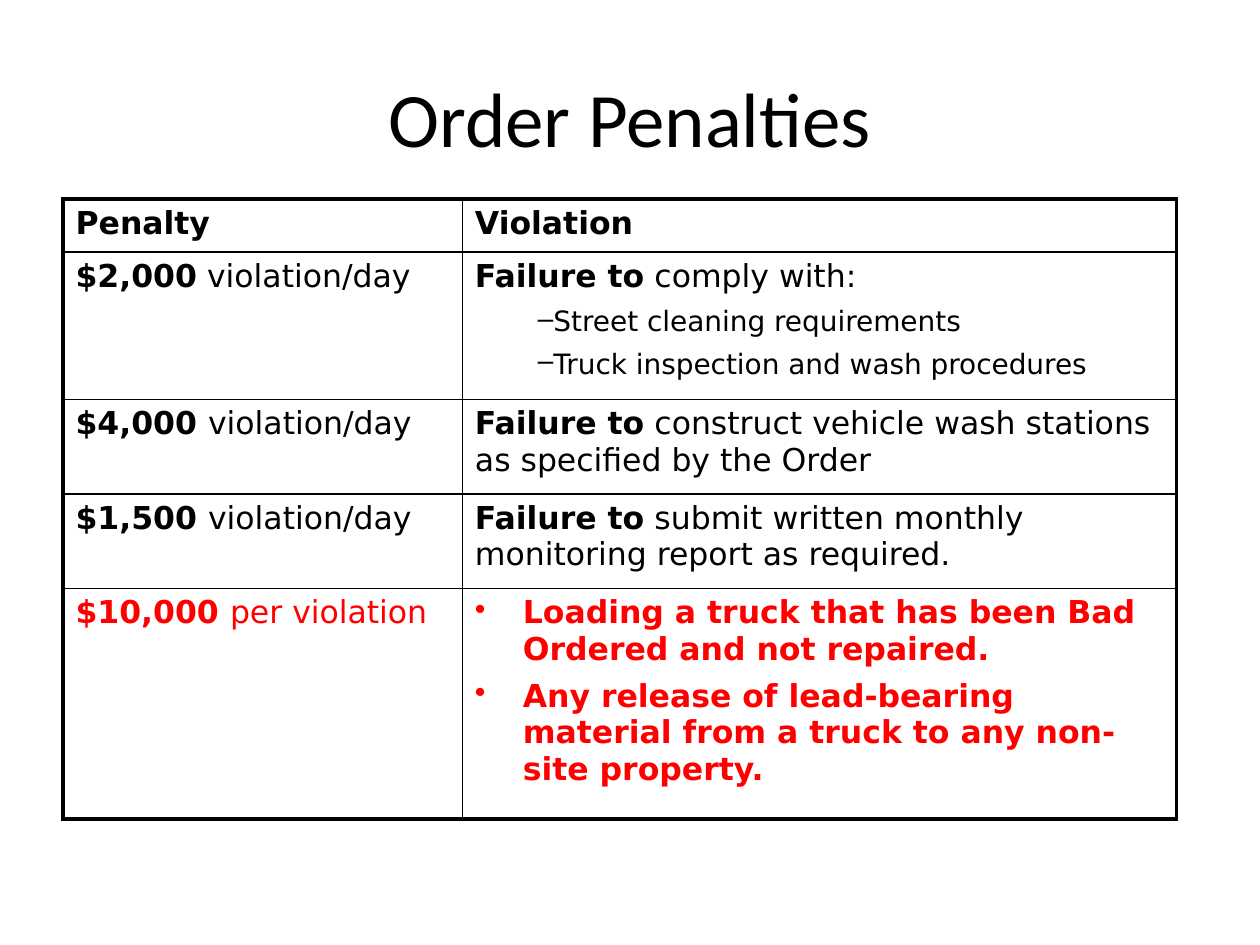
from lxml.etree import SubElement as Sub
from pptx import Presentation
from pptx.dml.color import RGBColor
from pptx.enum.text import MSO_ANCHOR as Anchor, PP_ALIGN as Align
from pptx.oxml.ns import qn
from pptx.util import Inches, Pt

BLACK = RGBColor(0, 0, 0)
RED = RGBColor(255, 0, 0)
WHITE = RGBColor(255, 255, 255)
THIN, THICK = Pt(1), Pt(2.25)

# A cell is a list of paragraphs: (kind, bold text, plain text).
ROWS = [
    (0.42, BLACK, [("text", "Penalty", "")], [("text", "Violation", "")]),
    (1.17, BLACK, [("text", "$2,000", " violation/day")],
     [("text", "Failure to", " comply with:"),
      ("dash", "", "Street cleaning requirements"),
      ("dash", "", "Truck inspection and wash procedures")]),
    (0.75, BLACK, [("text", "$4,000 ", "violation/day")],
     [("text", "Failure to",
       " construct vehicle wash stations as specified by the Order")]),
    (0.75, BLACK, [("text", "$1,500 ", "violation/day")],
     [("text", "Failure to",
       " submit written monthly monitoring report as required.")]),
    (1.83, RED, [("text", "$10,000 ", "per violation")],
     [("dot", "Loading a truck that has been Bad Ordered and not repaired.", ""),
      ("dot", "Any release of lead-bearing material from a truck "
              "to any non-site property.", "")]),
]
COLS = (3.17, 5.67)

# kind: (level, left margin, indent, bullet, size)
KINDS = {
    "text": (0, 0, 0, None, 18),
    "dash": (1, 0.5, 0, "–", 16),
    "dot": (0, 0.38, -0.38, "•", 18),
}


class Deck:
    head = "Calibri"
    body = "DejaVu Sans"

    def __init__(self):
        self.prs = Presentation()
        self.prs.slide_width = Inches(10)
        self.prs.slide_height = Inches(7.5)
        self.slide = self.prs.slides.add_slide(self.prs.slide_layouts[6])

    def run(self, para, text, face, size, color, bold=False):
        run = para.add_run()
        run.text = text
        font = run.font
        font.name, font.size, font.bold = face, Pt(size), bold
        font.color.rgb = color

    def title(self, text):
        box = self.slide.shapes.add_textbox(
            Inches(0.5), Inches(0.3), Inches(9), Inches(1.25))
        frame = box.text_frame
        frame.word_wrap = True
        frame.vertical_anchor = Anchor.MIDDLE
        para = frame.paragraphs[0]
        para.alignment = Align.CENTER
        self.run(para, text, self.head, 44, BLACK)

    def para(self, para, kind, bold, plain, color):
        level, left, indent, mark, size = KINDS[kind]
        para.level = level
        para.space_after = Pt(6)
        props = para._p.get_or_add_pPr()
        props.set("marL", str(Inches(left)))
        props.set("indent", str(Inches(indent)))
        if mark:
            Sub(props, qn("a:buChar"), char=mark)
        for text, heavy in ((bold, True), (plain, False)):
            if text:
                self.run(para, text, self.body, size, color, heavy)

    def edges(self, cell, widths):
        """Draw the left, right, top and bottom borders, in that order."""
        props = cell._tc.get_or_add_tcPr()
        for side, width in zip("LRTB", widths):
            line = Sub(props, qn(f"a:ln{side}"), w=str(width))
            fill = Sub(line, qn("a:solidFill"))
            Sub(fill, qn("a:srgbClr"), val=str(BLACK))

    def table(self, rows, cols):
        frame = self.slide.shapes.add_table(
            len(rows), len(cols), Inches(0.5), Inches(1.58),
            Inches(sum(cols)), Inches(sum(row[0] for row in rows)))
        grid = frame.table
        grid.first_row = grid.horz_banding = False
        for col, width in zip(grid.columns, cols):
            col.width = Inches(width)
        for r, (height, color, *cells) in enumerate(rows):
            grid.rows[r].height = Inches(height)
            for c, paras in enumerate(cells):
                cell = grid.cell(r, c)
                outer = (c == 0, c == len(cols) - 1, r == 0, r == len(rows) - 1)
                self.edges(cell, [THICK if out else THIN for out in outer])
                cell.fill.solid()
                cell.fill.fore_color.rgb = WHITE
                text = cell.text_frame
                for i, item in enumerate(paras):
                    para = text.add_paragraph() if i else text.paragraphs[0]
                    self.para(para, *item, color)


def main():
    deck = Deck()
    deck.title("Order Penalties")
    deck.table(ROWS, COLS)
    deck.prs.save("out.pptx")


if __name__ == "__main__":
    main()
